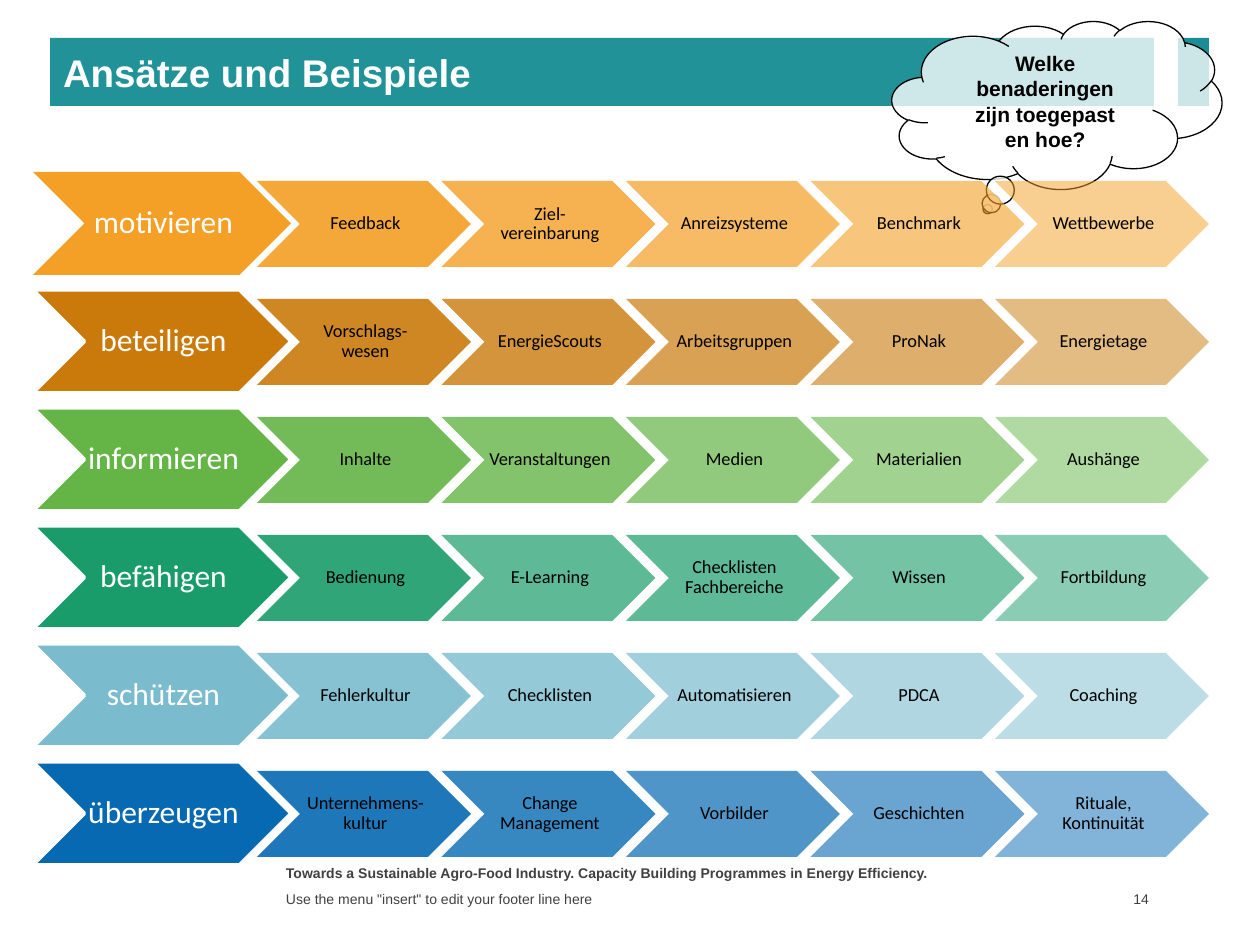
from lxml.etree import SubElement
from pptx import Presentation
from pptx.dml.color import RGBColor
from pptx.enum.shapes import MSO_SHAPE
from pptx.enum.text import MSO_ANCHOR, MSO_AUTO_SIZE, PP_ALIGN
from pptx.oxml.ns import qn
from pptx.util import Pt

PX = 914400 / 126
COLORS = {
    "title": "209298", "accent": "1B8E95", "white": "FFFFFF",
    "black": "000000", "gray": "404040", "orange": "F49F25",
    "brown": "C97A0A", "lime": "64B446", "green": "199C6A",
    "sky": "7ABCCE", "blue": "0669B2",
}
FADES = (90, 80, 70, 60, 50)
ROWS = [
    ("orange", "motivieren", FADES,
     ("Feedback", "Ziel-vereinbarung", "Anreizsysteme", "Benchmark", "Wettbewerbe")),
    ("brown", "beteiligen", FADES,
     ("Vorschlags-wesen", "EnergieScouts", "Arbeitsgruppen", "ProNak", "Energietage")),
    ("lime", "informieren", FADES,
     ("Inhalte", "Veranstaltungen", "Medien", "Materialien", "Aushänge")),
    ("green", "befähigen", (90, 70, 70, 60, 50),
     ("Bedienung", "E-Learning", "Checklisten Fachbereiche", "Wissen", "Fortbildung")),
    ("sky", "schützen", FADES,
     ("Fehlerkultur", "Checklisten", "Automatisieren", "PDCA", "Coaching")),
    ("blue", "überzeugen", FADES,
     ("Unternehmens-kultur", "Change Management", "Vorbilder", "Geschichten",
      "Rituale, Kontinuität")),
]


def emu(*sizes):
    return [round(size * PX) for size in sizes]


def rgb(name):
    return RGBColor.from_string(COLORS[name])


def paint(shape, color, alpha=100):
    """Fill with a colour at alpha percent opacity."""
    shape.fill.solid()
    shape.fill.fore_color.rgb = rgb(color)
    if alpha < 100:
        tint = shape._element.spPr.find(qn("a:solidFill"))[0]
        SubElement(tint, qn("a:alpha"), val=str(alpha * 1000))


def draw(slide, kind, box, color, alpha=100, line=None, weight=1):
    shape = slide.shapes.add_shape(kind, *emu(*box))
    shape.shadow.inherit = False
    paint(shape, color, alpha)
    if line:
        shape.line.color.rgb = rgb(line)
        shape.line.width = Pt(weight)
    else:
        shape.line.fill.background()
    return shape


def write(shape, text, size, color, font="Arial", bold=False,
          align=PP_ALIGN.LEFT, anchor=MSO_ANCHOR.MIDDLE, pad=(13, 6, 13, 6)):
    frame = shape.text_frame
    frame.text = text
    frame.word_wrap = True
    frame.auto_size = MSO_AUTO_SIZE.NONE
    frame.vertical_anchor = anchor
    (frame.margin_left, frame.margin_top,
     frame.margin_right, frame.margin_bottom) = emu(*pad)
    para = frame.paragraphs[0]
    para.alignment = align
    style = para.runs[0].font
    style.name, style.size, style.bold = font, Pt(size), bold
    style.color.rgb = rgb(color)
    return para


def header(slide, left, top, width, height):
    title = slide.shapes.title
    bar = width - 55
    title.left, title.top, title.width, title.height = emu(left, top, bar, height)
    paint(title, "title")
    write(title, "Ansätze und Beispiele", 22, "white", bold=True)
    draw(slide, MSO_SHAPE.RECTANGLE, (left + width - 31, top, 31, height), "accent")


def cloud(slide, *box):
    shape = draw(slide, MSO_SHAPE.CLOUD_CALLOUT, box, "white", 78, "black", 0.75)
    shape.adjustments[0] = -0.21
    shape.adjustments[1] = 0.62
    write(shape, "Welke benaderingen zijn toegepast en hoe?", 12, "black",
          bold=True, align=PP_ALIGN.CENTER, pad=(25, 6, 25, 6))


def chevron(slide, box, text, size, ink, color, alpha=100, line=None):
    shape = draw(slide, MSO_SHAPE.CHEVRON, box, color, alpha, line, 2)
    para = write(shape, text, size, ink, "Calibri", align=PP_ALIGN.CENTER,
                 pad=(3, 1, 0, 1))
    para.line_spacing = 0.9


def chain(slide, left, top, row, line):
    """Draw one large chevron followed by its fading steps."""
    color, head, fades, steps = row
    chevron(slide, (left, top, 258, 103), head, 18, "white", color, line=line)
    for col, (text, fade) in enumerate(zip(steps, fades)):
        box = (left + 224 + col * 369 / 2, top + 9, 214, 86)
        chevron(slide, box, text, 10.5, "black", color, fade)


def footer(slide, left, top):
    notes = [
        ((0, 0, 693, 26), MSO_ANCHOR.TOP, True, PP_ALIGN.LEFT, 13,
         "Towards a Sustainable Agro-Food Industry. "
         "Capacity Building Programmes in Energy Efficiency."),
        ((0, 28, 693, 24), MSO_ANCHOR.MIDDLE, False, PP_ALIGN.LEFT, 13,
         'Use the menu "insert" to edit your footer line here'),
        ((811, 27, 70, 25), MSO_ANCHOR.MIDDLE, False, PP_ALIGN.RIGHT, 5, "14"),
    ]
    for (dx, dy, width, height), anchor, bold, align, right, text in notes:
        box = slide.shapes.add_textbox(*emu(left + dx, top + dy, width, height))
        write(box, text, 8, "gray", bold=bold, align=align, anchor=anchor,
              pad=(13, 6, right, 6))


def main():
    deck = Presentation()
    deck.slide_width, deck.slide_height = emu(1260, 945)
    slide = deck.slides.add_slide(deck.slide_layouts[5])
    footer(slide, 273, 859)
    header(slide, 50, 38, 1159, 68)
    cloud(slide, 892, 21, 330, 168)
    for index, row in enumerate(ROWS):
        chain(slide, 33, 172 + index * 118, row, "white" if index else None)
    deck.save("out.pptx")


if __name__ == "__main__":
    main()
